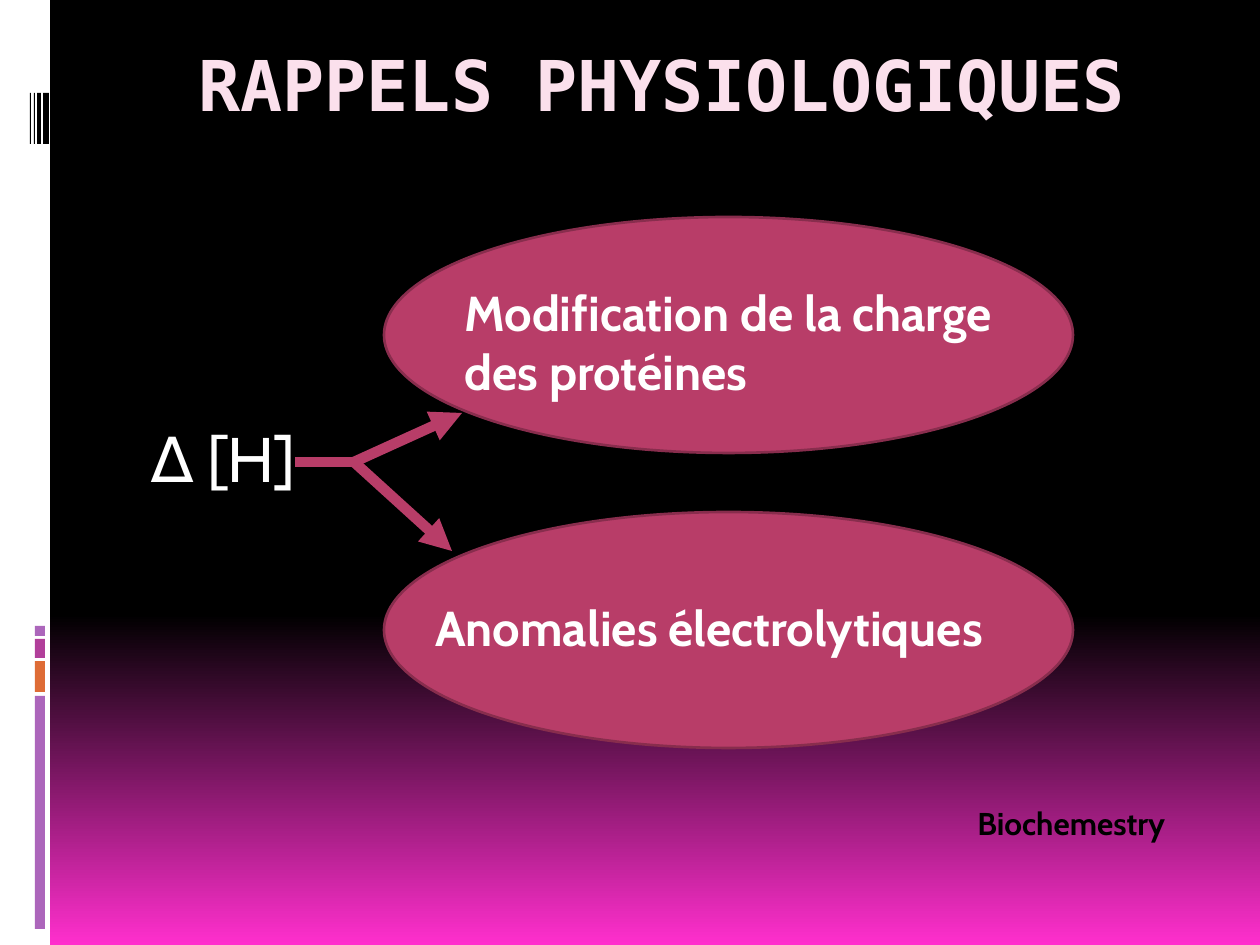
from dataclasses import dataclass
from pptx import Presentation
from pptx.dml.color import RGBColor
from pptx.enum.shapes import MSO_CONNECTOR, MSO_SHAPE
from pptx.enum.text import MSO_ANCHOR, PP_ALIGN
from pptx.oxml.ns import qn
from pptx.util import Pt
from lxml.etree import SubElement

PX = 914400 / 126  # EMU in one px


@dataclass
class Theme:
    white: str = "FFFFFF"
    black: str = "000000"
    glow: str = "FF2FCD"
    blush: str = "FBE0EC"
    rose: str = "B83D68"
    wine: str = "882D4D"
    lilac: str = "AC66BB"
    plum: str = "B13F9A"
    rust: str = "DE6C36"
    body: str = "Cabin"
    mono: str = "DejaVu Sans Mono"
    title: int = 40
    lead: int = 36
    label: int = 28
    note: int = 18


theme = Theme()
rgb = RGBColor.from_string


def emu(*sizes):
    return [round(size * PX) for size in sizes]


def draw(kind, box, fill, edge=None):
    shape = slide.shapes.add_shape(kind, *emu(*box))
    shape.shadow.inherit = False
    shape.fill.solid()
    shape.fill.fore_color.rgb = rgb(fill)
    if edge:
        shape.line.color.rgb = rgb(edge)
        shape.line.width = Pt(1.5)
    else:
        shape.line.fill.background()


deck = Presentation()
deck.slide_width, deck.slide_height = emu(1260, 945)
slide = deck.slides.add_slide(deck.slide_layouts[5])

# Background: black down to 65 %, then fading to pink
back = slide.background.fill
back.gradient()
back.gradient_angle = 270
for stop, (place, color) in zip(back.gradient_stops,
                                [(0.65, theme.black), (1, theme.glow)]):
    stop.position = place
    stop.color.rgb = rgb(color)

# Side band with barcode and colour blocks
draw(MSO_SHAPE.RECTANGLE, (0, 0, 50, 945), theme.white)
for left, width in [(43, 6), (37, 4), (34, 1), (30, 1)]:
    draw(MSO_SHAPE.RECTANGLE, (left, 93, width, 51), theme.black)
for top, height, color in [(696, 233, theme.lilac), (661, 31, theme.rust),
                           (639, 19, theme.plum), (626, 10, theme.lilac)]:
    draw(MSO_SHAPE.RECTANGLE, (35, top, 10, height), color)

# Effect ovals
for top in (512, 217):
    draw(MSO_SHAPE.OVAL, (384, top, 689, 236), theme.rose, theme.wine)

# Title
title = slide.shapes.title
title.left, title.top, title.width, title.height = emu(147, 29, 1071, 120)
frame = title.text_frame
frame.text = "RAPPELS PHYSIOLOGIQUES "
frame.vertical_anchor = MSO_ANCHOR.TOP
frame.margin_top = emu(12)[0]
para = frame.paragraphs[0]
para.alignment = PP_ALIGN.CENTER
para.font.name = theme.mono
para.font.size = Pt(theme.title)
para.font.bold = True
para.font.color.rgb = rgb(theme.blush)

# Cause, effects and subject
texts = [
    ("∆ [H]", (137, 393, 197, 108), theme.lead, theme.white, False),
    ("Modification de la charge\vdes protéines", (452, 276, 777, 131),
     theme.label, theme.white, True),
    ("Anomalies électrolytiques", (423, 591, 650, 72),
     theme.label, theme.white, True),
    ("Biochemestry", (965, 798, 256, 89), theme.note, theme.black, True),
]
for words, box, size, color, bold in texts:
    frame = slide.shapes.add_textbox(*emu(*box)).text_frame
    frame.word_wrap = True
    frame.text = words
    if size == theme.lead:
        frame.vertical_anchor = MSO_ANCHOR.BOTTOM
        frame.margin_left = emu(14)[0]
    font = frame.paragraphs[0].font
    font.name = theme.body
    font.size = Pt(size)
    font.bold = bold
    font.color.rgb = rgb(color)

# Forked arrow from the cause to both effects
fork = (354, 462)
for start, end, arrow in [(fork, (452, 551), True), (fork, (462, 413), True),
                          ((295, 462), fork, False)]:
    line = slide.shapes.add_connector(MSO_CONNECTOR.STRAIGHT,
                                      *emu(*start, *end))
    line.line.color.rgb = rgb(theme.rose)
    line.line.width = Pt(6)
    if arrow:
        SubElement(line.line._get_or_add_ln(), qn("a:tailEnd"), type="triangle")
    SubElement(line._element.spPr, qn("a:effectLst"))

deck.save("out.pptx")
